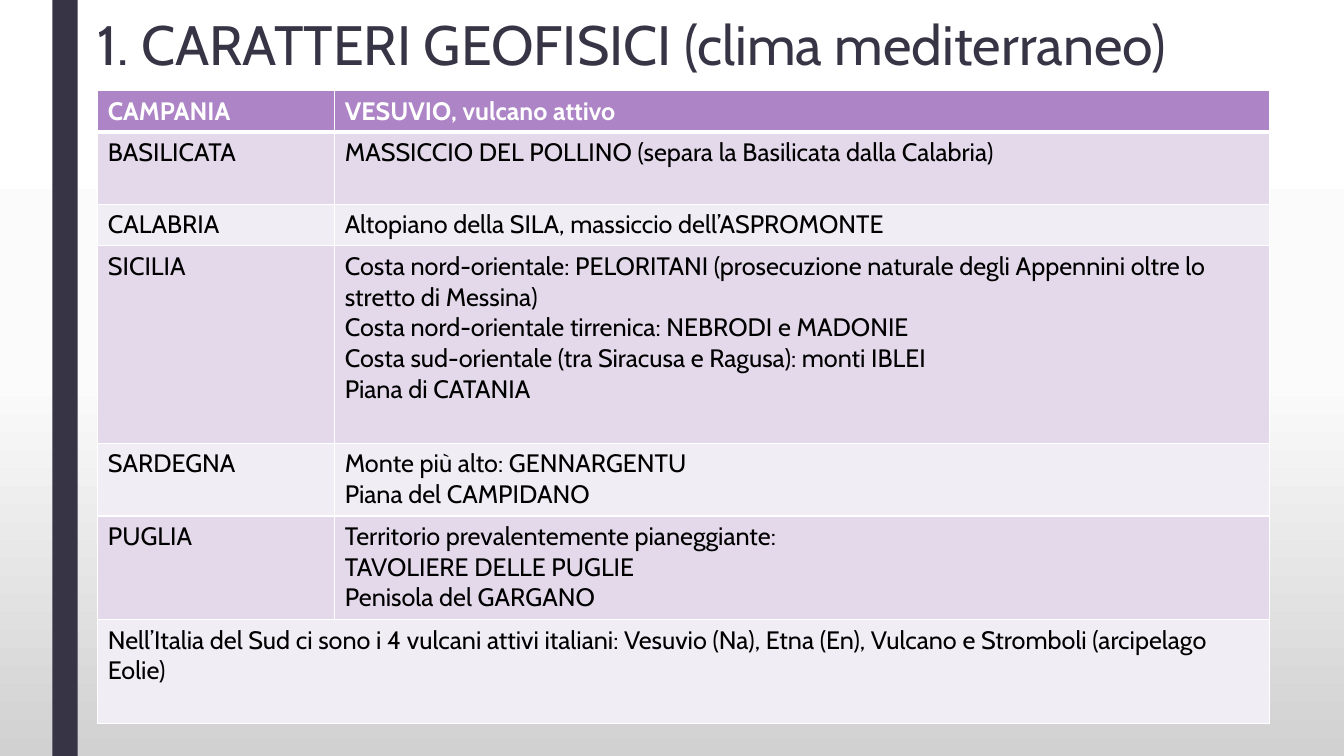
import copy

import lxml.etree
import pptx
import pptx.dml.color
import pptx.enum.shapes
import pptx.enum.text
import pptx.oxml.ns
import pptx.util

Inches = pptx.util.Inches
Pt = pptx.util.Pt
qn = pptx.oxml.ns.qn

HUES = {
    "dark": "373545", "head": "AD84C6", "odd": "E3D9EA", "even": "F1EDF5",
    "white": "FFFFFF", "pale": "FBFBFB", "grey": "D1D1D1", "black": "000000",
}
COLS = [2.35, 9.27]
ROWS = [
    (0.41, "CAMPANIA", "VESUVIO, vulcano attivo"),
    (0.72, "BASILICATA", "MASSICCIO DEL POLLINO (separa la Basilicata dalla Calabria)"),
    (0.41, "CALABRIA", "Altopiano della SILA, massiccio dell’ASPROMONTE"),
    (1.96, "SICILIA",
     "Costa nord-orientale: PELORITANI (prosecuzione naturale degli Appennini "
     "oltre lo stretto di Messina)\n"
     "Costa nord-orientale tirrenica: NEBRODI e MADONIE\n"
     "Costa sud-orientale (tra Siracusa e Ragusa): monti IBLEI\n"
     "Piana di CATANIA"),
    (0.72, "SARDEGNA", "Monte più alto: GENNARGENTU\nPiana del CAMPIDANO"),
    (1.03, "PUGLIA",
     "Territorio prevalentemente pianeggiante:\n"
     "TAVOLIERE DELLE PUGLIE\nPenisola del GARGANO"),
    (1.03, "Nell’Italia del Sud ci sono i 4 vulcani attivi italiani: Vesuvio (Na), "
     "Etna (En), Vulcano e Stromboli (arcipelago Eolie)", ""),
]


def rgb(hue):
    """Return the colour of a named hue."""
    return pptx.dml.color.RGBColor.from_string(HUES[hue])


def put(item, vals):
    """Set attributes from a dict of values."""
    for key, val in vals.items():
        setattr(item, key, val)


def style(frame, hue, vals):
    """Format every paragraph of a text frame."""
    for para in frame.paragraphs:
        put(para.font, {"name": "Cabin", **vals})
        para.font.color.rgb = rgb(hue)


def back(slide):
    """Fill the background with a vertical gradient."""
    fill = slide.background.fill
    fill.gradient()
    fill.gradient_angle = 270
    stops = fill.gradient_stops
    put(stops[0], {"position": 0})
    put(stops[1], {"position": 1})
    stops[0].color.rgb = rgb("white")
    stops[1].color.rgb = rgb("grey")
    first = slide.background._cSld.find(".//" + qn("a:gs"))
    first.addnext(copy.deepcopy(first))
    mid = fill.gradient_stops[1]
    mid.position = 0.5
    mid.color.rgb = rgb("pale")


def band(slide, box):
    """Draw the dark upright band."""
    bar = slide.shapes.add_shape(
        pptx.enum.shapes.MSO_SHAPE.RECTANGLE, *map(Inches, box))
    bar.shadow.inherit = False
    bar.fill.solid()
    bar.fill.fore_color.rgb = rgb("dark")
    bar.line.fill.background()


def title(slide, box, text):
    """Place and format the title."""
    head = slide.shapes.title
    put(head, dict(zip(("left", "top", "width", "height"), map(Inches, box))))
    frame = head.text_frame
    frame.text = text
    put(frame, {
        "word_wrap": True,
        "auto_size": pptx.enum.text.MSO_AUTO_SIZE.NONE,
        "vertical_anchor": pptx.enum.text.MSO_ANCHOR.TOP,
        "margin_top": Inches(0.08),
    })
    put(frame.paragraphs[0], {
        "alignment": pptx.enum.text.PP_ALIGN.LEFT, "line_spacing": 0.89})
    style(frame, "dark", {"size": Pt(39.6)})


def edge(cell, base):
    """Draw white borders, with the given width below."""
    props = cell._tc.get_or_add_tcPr()
    for i, side in enumerate("LRTB"):
        wide = base if side == "B" else 1
        line = lxml.etree.Element(qn("a:ln" + side), w=str(Pt(wide)))
        fill = lxml.etree.SubElement(line, qn("a:solidFill"))
        lxml.etree.SubElement(fill, qn("a:srgbClr"), val=HUES["white"])
        props.insert(i, line)


def grid(slide, box):
    """Build the table of regions."""
    table = slide.shapes.add_table(
        len(ROWS), len(COLS), *map(Inches, box)).table
    for col, wide in zip(table.columns, COLS):
        col.width = Inches(wide)
    for i, (high, *texts) in enumerate(ROWS):
        table.rows[i].height = Inches(high)
        top = i == 0
        shade = "head" if top else "odd" if i % 2 else "even"
        for j, text in enumerate(texts):
            cell = table.cell(i, j)
            cell.text = text
            cell.fill.solid()
            cell.fill.fore_color.rgb = rgb(shade)
            edge(cell, 3 if top else 1)
            style(cell.text_frame, "white" if top else "black",
                  {"size": Pt(18), "bold": top})
    last = len(ROWS) - 1
    table.cell(last, 0).merge(table.cell(last, 1))


def main():
    """Build and save the slide."""
    deck = pptx.Presentation()
    put(deck, {"slide_width": Inches(13.33), "slide_height": Inches(7.5)})
    slide = deck.slides.add_slide(deck.slide_layouts[5])
    back(slide)
    band(slide, (0.52, 0, 0.25, 7.5))
    title(slide, (0.87, 0.1, 11.54, 1.62),
          "1. CARATTERI GEOFISICI (clima mediterraneo)")
    grid(slide, (0.97, 0.9, sum(COLS), sum(row[0] for row in ROWS)))
    deck.save("out.pptx")


if __name__ == "__main__":
    main()
